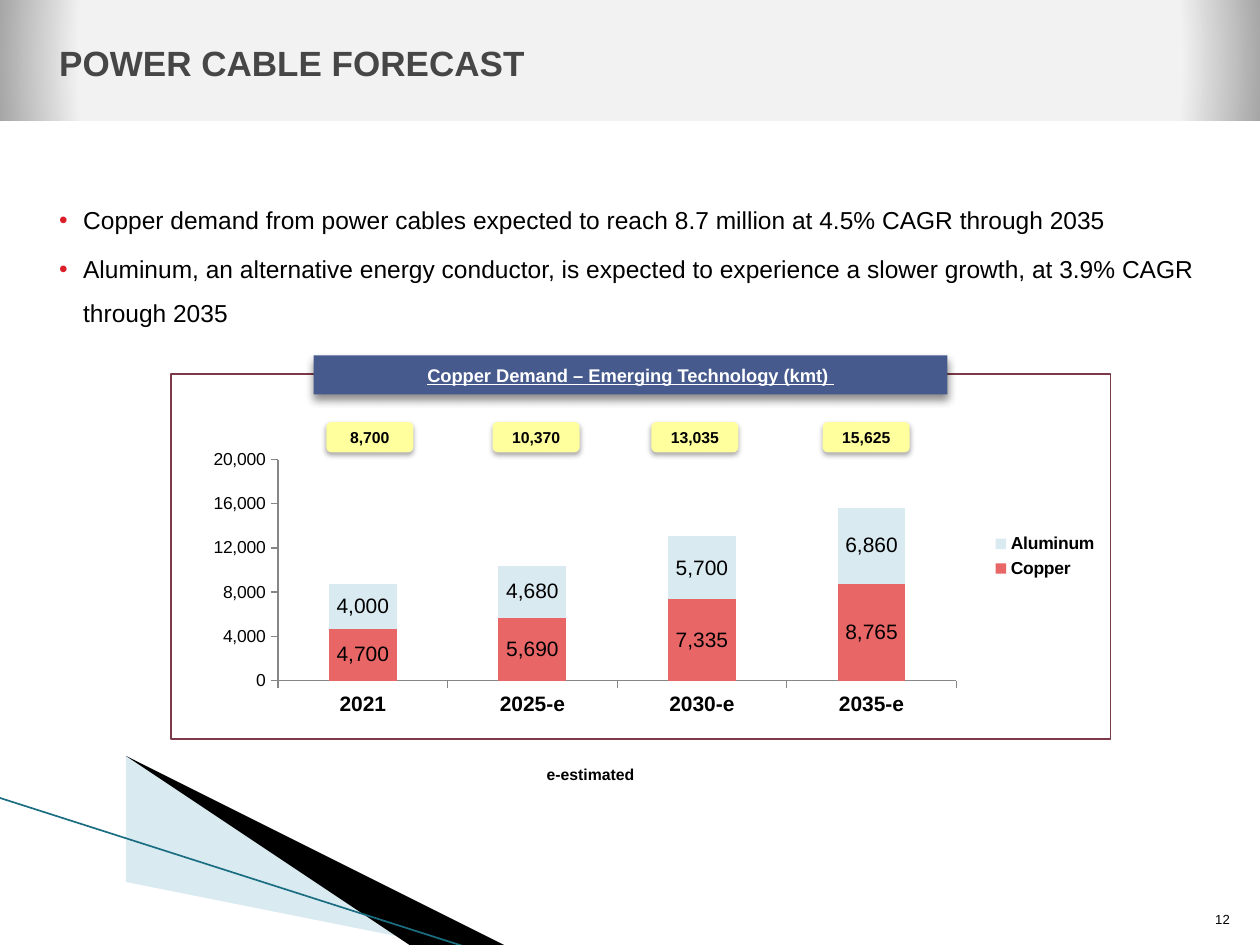
import lxml.etree
import pptx
import pptx.chart.data
import pptx.dml.color
import pptx.enum.chart
import pptx.enum.shapes
import pptx.enum.text
import pptx.oxml
import pptx.oxml.ns
import pptx.util

Inches, Pt, qn = pptx.util.Inches, pptx.util.Pt, pptx.oxml.ns.qn
SHAPES = pptx.enum.shapes.MSO_SHAPE
ALIGN, ANCHOR = pptx.enum.text.PP_ALIGN, pptx.enum.text.MSO_ANCHOR

# Content
TITLE = "POWER CABLE FORECAST"
BULLETS = [
    "Copper demand from power cables expected to reach 8.7 million at 4.5% CAGR through 2035",
    "Aluminum, an alternative energy conductor, is expected to experience a slower growth, "
    "at 3.9% CAGR through 2035",
]
CHART_TITLE = "Copper Demand – Emerging Technology (kmt) "
YEARS = ["2021", "2025-e", "2030-e", "2035-e"]
DEMAND = {"Copper": [4700, 5690, 7335, 8765], "Aluminum": [4000, 4680, 5700, 6860]}
TOTAL_LEFTS = [2.59, 3.91, 5.17, 6.53]
FOOTNOTE = "e-estimated"
PAGE_NUMBER = "12"

COLORS = {
    "text": "000000", "title": "464646", "white": "FFFFFF", "bullet": "DA1F28",
    "band": "F2F2F2", "band_edge": "A6A6A6", "pale_wedge": "A0CBDC", "wedge_line": "1B6E82",
    "banner": "475A8D", "total": "FFFF9E", "border": "7C3947", "axis": "868686",
    "Copper": "E96666", "Aluminum": "D9EAF1",
}
WEDGES = [
    ("pale_wedge", 40, [(0.55, 6.51), (5.95, 7.51), (4.56, 7.51), (0.55, 6.5)]),
    ("text", 100, [(0.53, 6.49), (4.57, 7.51), (3.72, 7.52), (0.54, 6.5)]),
]


def rgb(name):
    return pptx.dml.color.RGBColor.from_string(COLORS[name])


def add_xml(parent, tag, **attributes):
    child = lxml.etree.SubElement(parent, qn(tag))
    for key, value in attributes.items():
        child.set(key, str(value))
    return child


def place(shape, left, top, width, height):
    shape.left, shape.top = Inches(left), Inches(top)
    shape.width, shape.height = Inches(width), Inches(height)


def style_font(font, size, color="text", bold=False):
    font.name, font.size, font.bold = "Arial", Pt(size), bold
    font.color.rgb = rgb(color)


def write(shape, text, size, color="text", bold=True, align=ALIGN.LEFT, anchor=ANCHOR.TOP):
    frame = shape.text_frame
    frame.text, frame.word_wrap, frame.vertical_anchor = text, True, anchor
    paragraph = frame.paragraphs[0]
    paragraph.alignment = align
    style_font(paragraph.runs[0].font, size, color, bold)
    return paragraph


def add_block(slide, preset, box, color):
    shape = slide.shapes.add_shape(preset, *[Inches(value) for value in box])
    shape.shadow.inherit = False
    shape.fill.solid()
    shape.fill.fore_color.rgb = rgb(color)
    shape.line.fill.background()
    return shape


def add_shadow(shape, opacity, blur, distance):
    effects = shape._element.spPr.find(qn("a:effectLst"))
    shadow = add_xml(effects, "a:outerShdw", blurRad=Pt(blur), dist=Pt(distance),
                     dir=5400000, rotWithShape=0)
    color = add_xml(shadow, "a:srgbClr", val=COLORS["text"])
    add_xml(color, "a:alpha", val=opacity * 1000)


def add_decoration(slide):
    for color, opacity, points in WEDGES:
        builder = slide.shapes.build_freeform(*points[0], scale=Inches(1))
        builder.add_line_segments(points[1:], close=True)
        wedge = builder.convert_to_shape()
        wedge.shadow.inherit = False
        wedge.fill.solid()
        wedge.fill.fore_color.rgb = rgb(color)
        wedge.line.fill.background()
        if opacity < 100:
            fill_color = wedge._element.spPr.find(qn("a:solidFill"))[0]
            add_xml(fill_color, "a:alpha", val=opacity * 1000)

    edge = slide.shapes.add_connector(
        pptx.enum.shapes.MSO_CONNECTOR.STRAIGHT,
        Inches(-0.01), Inches(6.33), Inches(3.71), Inches(7.52))
    edge.line.color.rgb, edge.line.width = rgb("wedge_line"), Pt(0.95)
    add_xml(edge._element.spPr, "a:effectLst")

    # Header band with a radial gradient
    band = add_block(slide, SHAPES.RECTANGLE, (0, 0, 10, 0.96), "band")
    solid = band._element.spPr.find(qn("a:solidFill"))
    gradient = lxml.etree.Element(qn("a:gradFill"), rotWithShape="1")
    stops = add_xml(gradient, "a:gsLst")
    for position, color in [(0, "band"), (87, "band"), (100, "band_edge")]:
        stop = add_xml(stops, "a:gs", pos=position * 1000)
        add_xml(stop, "a:srgbClr", val=COLORS[color])
    radial = add_xml(gradient, "a:path", path="circle")
    add_xml(radial, "a:fillToRect", l=50000, t=50000, r=50000, b=50000)
    solid.getparent().replace(solid, gradient)


def add_bullets(body):
    place(body, 0.28, 1.42, 9.37, 0.74)
    frame = body.text_frame
    frame.text = "\n".join(BULLETS)
    frame.auto_size = pptx.enum.text.MSO_AUTO_SIZE.NONE
    frame.margin_top = Inches(0.09)
    for index, paragraph in enumerate(frame.paragraphs):
        properties = paragraph._p.get_or_add_pPr()
        properties.set("marL", str(Inches(0.28)))
        properties.set("indent", str(Inches(-0.19)))
        bullet_color = add_xml(properties, "a:buClr")
        add_xml(bullet_color, "a:srgbClr", val=COLORS["bullet"])
        add_xml(properties, "a:buChar", char="•")
        paragraph.line_spacing = 1.5
        paragraph.space_before = Pt(3 if index else 0)
        style_font(paragraph.runs[0].font, 14)


def add_demand_chart(slide):
    data = pptx.chart.data.CategoryChartData(number_format="#,##0")
    data.categories = YEARS
    for name, values in DEMAND.items():
        data.add_series(name, values)
    chart = slide.shapes.add_chart(
        pptx.enum.chart.XL_CHART_TYPE.COLUMN_STACKED,
        Inches(1.35), Inches(2.96), Inches(7.47), Inches(2.91), data).chart
    style_font(chart.font, 12)
    chart.has_title = False
    chart.has_legend = True
    chart.legend.position = pptx.enum.chart.XL_LEGEND_POSITION.RIGHT
    chart.legend.include_in_layout = False
    style_font(chart.legend.font, 10, bold=True)

    plot = chart.plots[0]
    plot.gap_width, plot.overlap, plot.vary_by_categories = 150, 100, False
    for series in plot.series:
        series.format.fill.solid()
        series.format.fill.fore_color.rgb = rgb(series.name)
        labels = series.data_labels
        labels.show_value = True
        labels.number_format, labels.number_format_is_linked = "#,##0", False
        style_font(labels.font, 12)

    values = chart.value_axis
    values.minimum_scale, values.maximum_scale, values.major_unit = 0, 20000, 4000
    values.has_major_gridlines = False
    values.tick_labels.number_format = "#,##0"
    values.tick_labels.number_format_is_linked = False
    for axis, size, bold in [(values, 10, False), (chart.category_axis, 12, True)]:
        axis.major_tick_mark = pptx.enum.chart.XL_TICK_MARK.OUTSIDE
        axis.format.line.color.rgb = rgb("axis")
        style_font(axis.tick_labels.font, size, bold=bold)

    # Fixed inner plot area
    area = chart._chartSpace.chart.plotArea
    for old_layout in area.findall(qn("c:layout")):
        area.remove(old_layout)
    layout = lxml.etree.Element(qn("c:layout"))
    manual = add_xml(layout, "c:manualLayout")
    for tag, value in [("layoutTarget", "inner"), ("xMode", "edge"), ("yMode", "edge"),
                       ("x", 0.114), ("y", 0.235), ("w", 0.722), ("h", 0.606)]:
        add_xml(manual, "c:" + tag, val=value)
    area.insert(0, layout)

    # Chart border
    frame = lxml.etree.Element(qn("c:spPr"))
    add_xml(frame, "a:noFill")
    line = add_xml(add_xml(frame, "a:ln", w=Pt(1)), "a:solidFill")
    add_xml(line, "a:srgbClr", val=COLORS["border"])
    chart._chartSpace.chart.addnext(frame)


def main():
    presentation = pptx.Presentation()
    presentation.slide_width, presentation.slide_height = Inches(10), Inches(7.5)
    slide = presentation.slides.add_slide(presentation.slide_layouts[1])
    title, body = slide.shapes.title, slide.placeholders[1]

    add_decoration(slide)
    for placeholder in (body, title):  # bring in front of the header band
        slide.shapes._spTree.append(placeholder._element)
    add_bullets(body)
    place(title, 0.37, 0.2, 9, 0.6)
    write(title, TITLE, 20, "title", anchor=ANCHOR.MIDDLE)

    number = slide.shapes.add_textbox(Inches(9.46), Inches(7.01), Inches(0.4), Inches(0.4))
    write(number, PAGE_NUMBER, 7.5, bold=False, align=ALIGN.RIGHT, anchor=ANCHOR.BOTTOM)
    footnote = slide.shapes.add_textbox(Inches(4.24), Inches(6.02), Inches(1.25), Inches(0.25))
    write(footnote, FOOTNOTE, 9)

    add_demand_chart(slide)
    banner = add_block(slide, SHAPES.RECTANGLE, (2.49, 2.82, 5.03, 0.31), "banner")
    add_shadow(banner, 45, 5, 3)
    heading = write(banner, CHART_TITLE, 10.5, "white", align=ALIGN.CENTER, anchor=ANCHOR.MIDDLE)
    heading.runs[0].font.underline = True

    # Yearly totals above the columns
    for left, amounts in zip(TOTAL_LEFTS, zip(*DEMAND.values())):
        total = add_block(slide, SHAPES.ROUNDED_RECTANGLE, (left, 3.35, 0.69, 0.24), "total")
        add_shadow(total, 35, 3.1, 1.8)
        total.text_frame.margin_left = total.text_frame.margin_right = Inches(0.04)
        write(total, f"{sum(amounts):,}", 9, align=ALIGN.CENTER, anchor=ANCHOR.MIDDLE)

    presentation.save("out.pptx")


if __name__ == "__main__":
    main()
